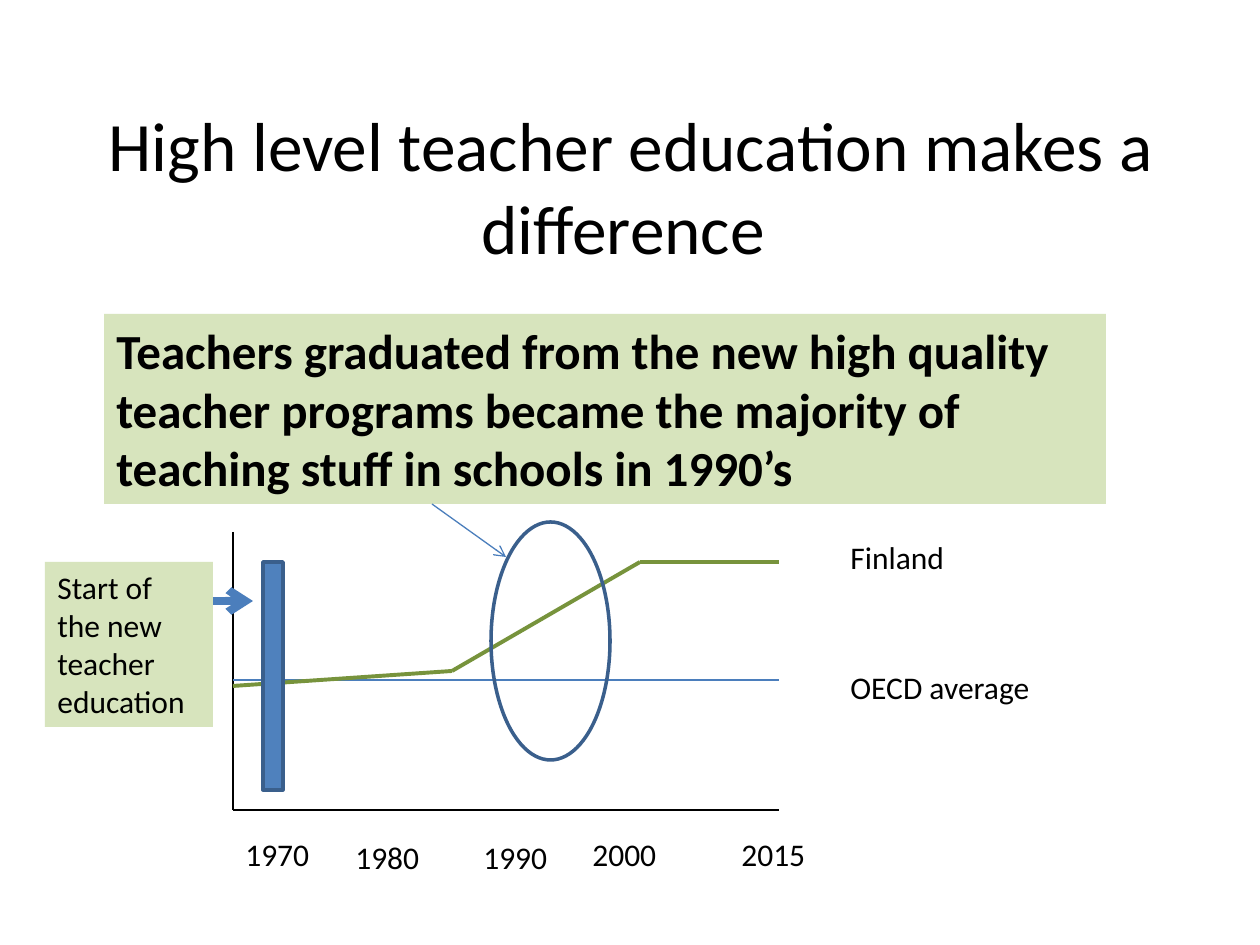
from dataclasses import dataclass
from itertools import pairwise

from lxml.etree import SubElement
from pptx import Presentation
from pptx.dml.color import RGBColor
from pptx.enum.shapes import MSO_CONNECTOR, MSO_SHAPE
from pptx.enum.text import MSO_ANCHOR, PP_ALIGN
from pptx.oxml.ns import qn
from pptx.util import Pt

PX = 914400 / 126


@dataclass(frozen=True)
class Theme:
    font: str = "Calibri"
    ink: str = "000000"
    note: str = "D7E4BD"
    finland: str = "77933C"
    accent: str = "4B7EBC"
    bar: str = "4F81BD"
    outline: str = "3A5F8C"
    title_size: float = 39.6
    message_size: float = 28
    label_size: float = 18


THEME = Theme()

TITLE = ("High level teacher education makes a difference ", (64, 106, 1134, 158))
MESSAGE = (
    "Teachers graduated from the new high quality teacher programs "
    "became the majority of teaching stuff in schools in 1990’s",
    (104, 314, 1002, 190),
)
START_NOTE = ("Start of the new teacher education", (45, 562, 168, 165))

LABEL_HEIGHT = 50
LABELS = [
    ("1970", 233, 829, 129),
    ("1980", 343, 832, 90),
    ("1990", 471, 832, 90),
    ("2000", 580, 829, 119),
    ("2015", 729, 829, 110),
    ("Finland", 838, 532, 208),
    ("OECD average", 838, 662, 268),
]

LEFT, RIGHT, TOP, BOTTOM = 233, 779, 532, 810
AXES = [(LEFT, TOP), (LEFT, BOTTOM), (RIGHT, BOTTOM)]
OECD_AVERAGE = [(LEFT, 680), (RIGHT, 680)]
FINLAND = [(LEFT, 686), (452, 671), (640, 562), (RIGHT, 562)]
START_ARROW = [(213, 601), (253, 601)]
MESSAGE_ARROW = [(432, 504), (506, 557)]
START_BAR = (263, 562, 20, 228)
MAJORITY_RING = (491, 522, 119, 238)


def emu(*lengths):
    return [round(length * PX) for length in lengths]


def colour(code):
    return RGBColor.from_string(code)


def write(shape, text, size, bold=False, align=PP_ALIGN.LEFT, anchor=MSO_ANCHOR.TOP):
    frame = shape.text_frame
    frame.text = text
    frame.word_wrap = True
    frame.vertical_anchor = anchor
    paragraph = frame.paragraphs[0]
    paragraph.alignment = align
    font = paragraph.runs[0].font
    font.name, font.size, font.bold = THEME.font, Pt(size), bold
    font.color.rgb = colour(THEME.ink)


def add_text(slide, text, box, size, **style):
    write(slide.shapes.add_textbox(*emu(*box)), text, size, **style)


def add_block(slide, preset, box, fill=None, outline=None):
    block = slide.shapes.add_shape(preset, *emu(*box))
    block.shadow.inherit = False
    if fill:
        block.fill.solid()
        block.fill.fore_color.rgb = colour(fill)
    else:
        block.fill.background()
    if outline:
        block.line.color.rgb = colour(outline)
        block.line.width = Pt(2)
    else:
        block.line.fill.background()
    return block


def add_path(slide, points, code, width, arrow=False):
    for start, end in pairwise(points):
        segment = slide.shapes.add_connector(
            MSO_CONNECTOR.STRAIGHT, *emu(*start, *end)
        )
        segment.line.color.rgb = colour(code)
        segment.line.width = Pt(width)
        if arrow:
            SubElement(segment.line._get_or_add_ln(), qn("a:tailEnd"), type="arrow")
        SubElement(segment._element.spPr, qn("a:effectLst"))


def main():
    deck = Presentation()
    deck.slide_width, deck.slide_height = emu(1260, 945)
    slide = deck.slides.add_slide(deck.slide_layouts[6])

    add_text(slide, *TITLE, THEME.title_size,
             align=PP_ALIGN.CENTER, anchor=MSO_ANCHOR.MIDDLE)
    message, message_box = MESSAGE
    write(add_block(slide, MSO_SHAPE.RECTANGLE, message_box, THEME.note),
          message, THEME.message_size, bold=True)

    add_path(slide, AXES, THEME.ink, 1.5)
    add_path(slide, OECD_AVERAGE, THEME.accent, 0.75)
    add_path(slide, FINLAND, THEME.finland, 2.25)
    for label, left, top, width in LABELS:
        add_text(slide, label, (left, top, width, LABEL_HEIGHT), THEME.label_size)

    add_block(slide, MSO_SHAPE.OVAL, MAJORITY_RING, outline=THEME.outline)
    add_block(slide, MSO_SHAPE.RECTANGLE, START_BAR, THEME.bar, THEME.outline)
    start_note, start_box = START_NOTE
    write(add_block(slide, MSO_SHAPE.RECTANGLE, start_box, THEME.note),
          start_note, THEME.label_size)
    add_path(slide, START_ARROW, THEME.accent, 4.5, arrow=True)
    add_path(slide, MESSAGE_ARROW, THEME.accent, 0.75, arrow=True)

    deck.save("out.pptx")


if __name__ == "__main__":
    main()
